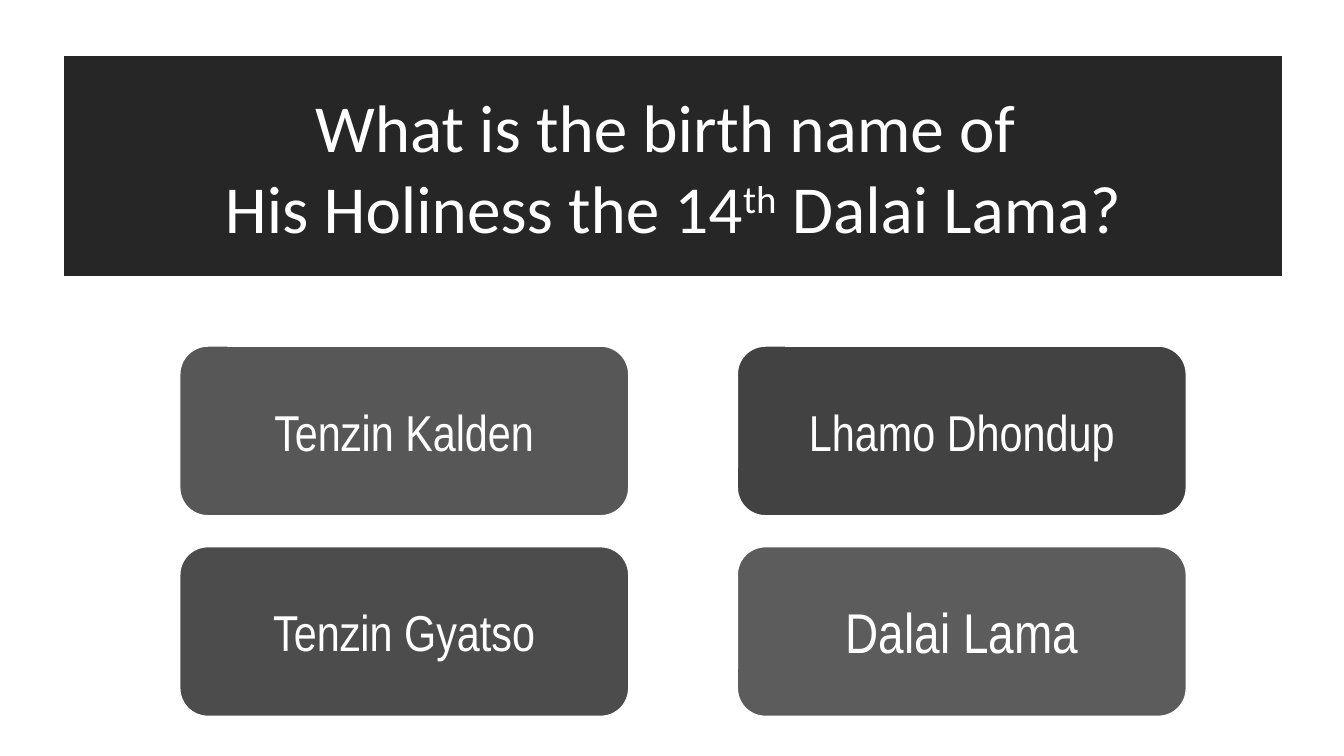
from lxml.etree import SubElement
from pptx import Presentation
from pptx.dml.color import RGBColor
from pptx.enum.shapes import MSO_SHAPE
from pptx.enum.text import MSO_ANCHOR, MSO_AUTO_SIZE, PP_ALIGN
from pptx.oxml.ns import qn
from pptx.util import Inches, Pt

WHITE = "FFFFFF"
BLACK = "000000"
QUESTION_BOX = (0.62, 0.55, 12.11, 2.2)
ANSWER_GRID = (1.78, 3.43, 9.99, 3.68)
ANSWER_SIZE = (4.46, 1.69)
# Rows of answers: text, opacity in percent, font size
ANSWERS = [
    [("Tenzin Kalden", 66, 36), ("Lhamo Dhondup", 74, 36)],
    [("Tenzin Gyatso", 70, 36), ("Dalai Lama", 64, 40)],
]


def color(hex_string):
    return RGBColor.from_string(hex_string)


def style_panel(shape, opacity):
    """Give the shape a see-through black fill and a white outline."""
    shape.fill.solid()
    shape.fill.fore_color.rgb = color(BLACK)
    fill_color = shape.fill._xPr.find(qn("a:solidFill"))[0]
    SubElement(fill_color, qn("a:alpha"), val=str(opacity * 1000))
    shape.line.color.rgb = color(WHITE)
    shape.line.width = Pt(1.5)
    frame = shape.text_frame
    frame.word_wrap = True
    frame.auto_size = MSO_AUTO_SIZE.NONE
    frame.vertical_anchor = MSO_ANCHOR.MIDDLE


def style_text(shape, font_name, size):
    for paragraph in shape.text_frame.paragraphs:
        paragraph.alignment = PP_ALIGN.CENTER
        paragraph.font.name = font_name
        paragraph.font.size = Pt(size)
        paragraph.font.color.rgb = color(WHITE)


def add_question(slide, box):
    title = slide.shapes.title
    title.left, title.top, title.width, title.height = map(Inches, box)
    geometry = SubElement(title.element.spPr, qn("a:prstGeom"), prst="roundRect")
    SubElement(geometry, qn("a:avLst"))
    style_panel(title, 85)

    frame = title.text_frame
    frame.text = "What is the birth name of "
    second_line = frame.add_paragraph()
    for text in ("His Holiness the 14", "th", " Dalai Lama?"):
        run = second_line.add_run()
        run.text = text
        if text == "th":
            run.font._element.set("baseline", "30000")
    style_text(title, "Calibri", 48)


def add_answers(slide, box):
    left, top, width, height = box
    answer_width, answer_height = ANSWER_SIZE
    column_step = width - answer_width
    row_step = height - answer_height
    for row, answers in enumerate(ANSWERS):
        for column, (text, opacity, size) in enumerate(answers):
            answer = slide.shapes.add_shape(
                MSO_SHAPE.ROUNDED_RECTANGLE,
                Inches(left + column * column_step),
                Inches(top + row * row_step),
                Inches(answer_width),
                Inches(answer_height),
            )
            answer.shadow.inherit = False
            style_panel(answer, opacity)
            answer.text_frame.text = text
            style_text(answer, "Arial Narrow", size)


def main():
    presentation = Presentation()
    presentation.slide_width = Inches(13.33)
    presentation.slide_height = Inches(7.5)
    title_only = presentation.slide_layouts[5]
    slide = presentation.slides.add_slide(title_only)
    slide.background.fill.solid()
    slide.background.fill.fore_color.rgb = color(WHITE)
    add_question(slide, QUESTION_BOX)
    add_answers(slide, ANSWER_GRID)
    presentation.save("out.pptx")


if __name__ == "__main__":
    main()
